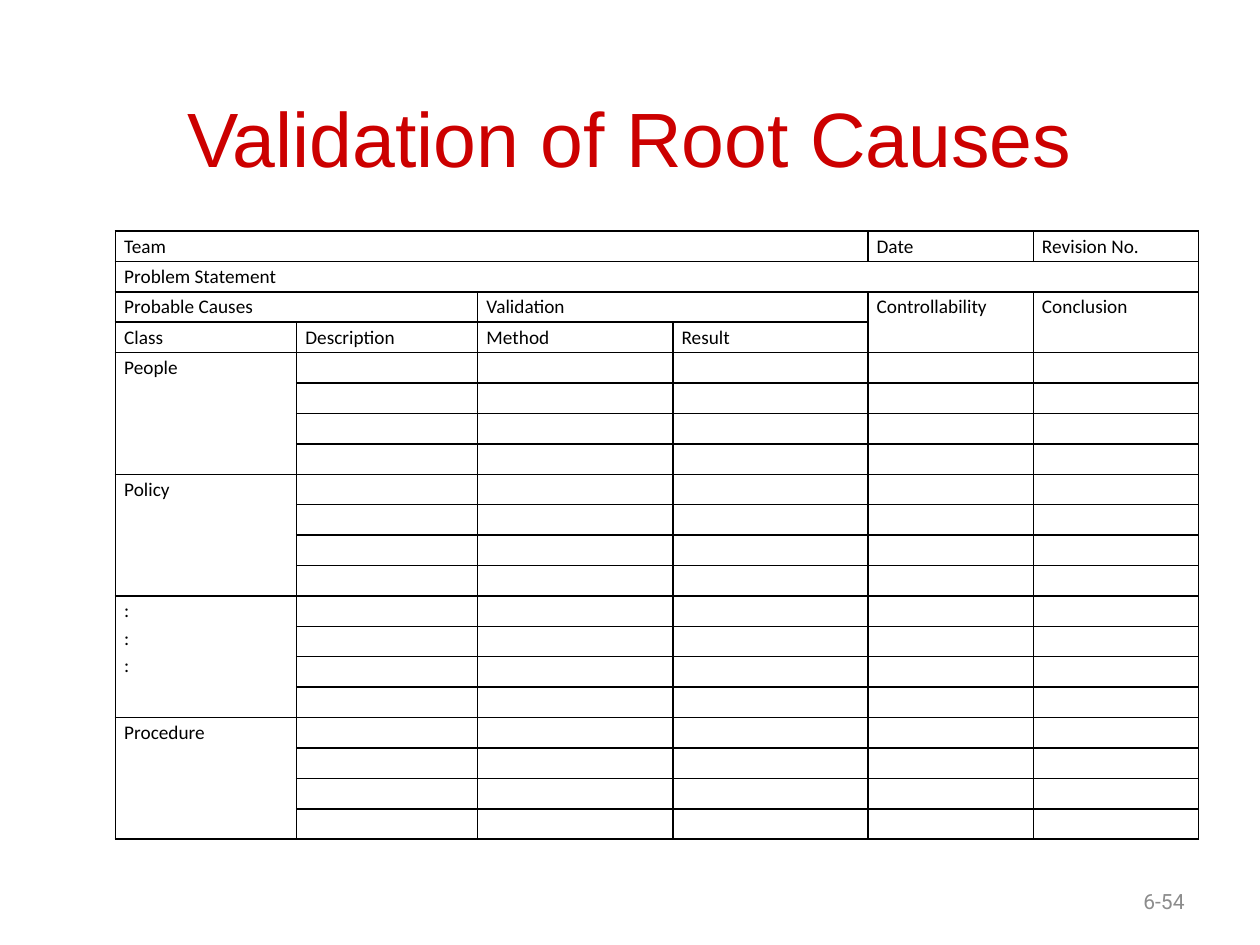
from lxml import etree
from pptx import Presentation
from pptx import util as u
from pptx.dml.color import RGBColor
from pptx.enum import text
from pptx.oxml import ns

ROWS = 20
ROW_HEIGHT = 17.39
COLUMN_WIDTHS = [103.5, 103.5, 111.5, 111.5, 94.5, 94.5]
GROUP_SIZE = 4
GROUPS = ["People", "Policy", ":\n:\n:", "Procedure"]
HEADINGS = [
    (0, 0, 1, 4, "Team"),
    (0, 4, 1, 1, "Date"),
    (0, 5, 1, 1, "Revision No."),
    (1, 0, 1, 6, "Problem Statement"),
    (2, 0, 1, 2, "Probable Causes"),
    (2, 2, 1, 2, "Validation"),
    (2, 4, 2, 1, "Controllability"),
    (2, 5, 2, 1, "Conclusion"),
    (3, 0, 1, 1, "Class"),
    (3, 1, 1, 1, "Description"),
    (3, 2, 1, 1, "Method"),
    (3, 3, 1, 1, "Result"),
]


def rgb(color):
    return RGBColor.from_string(color)


def write(frame, content, size, font, color, align=text.PP_ALIGN.LEFT,
          anchor=text.MSO_ANCHOR.TOP, spacing=None):
    frame.text = content
    frame.word_wrap = True
    frame.vertical_anchor = anchor
    for paragraph in frame.paragraphs:
        paragraph.alignment = align
        paragraph.line_spacing = spacing
        for run in paragraph.runs:
            run.font.size = u.Pt(size)
            run.font.name = font
            run.font.color.rgb = rgb(color)
        if not paragraph.runs:
            end = etree.SubElement(paragraph._p, ns.qn("a:endParaRPr"))
            end.set("sz", str(size * 100))


def add_borders(cell, color, width):
    properties = cell._tc.get_or_add_tcPr()
    for side in ("a:lnL", "a:lnR", "a:lnT", "a:lnB"):
        line = etree.SubElement(properties, ns.qn(side), w=str(u.Pt(width)))
        fill = etree.SubElement(line, ns.qn("a:solidFill"))
        etree.SubElement(fill, ns.qn("a:srgbClr"), val=color)


def format_cell(cell, content=""):
    write(cell.text_frame, content, size=11, font="Calibri", color="000000",
          spacing=1.15)


def add_title(slide, content):
    title = slide.shapes.title
    title.left, title.top = u.Pt(36), u.Pt(48)
    title.width, title.height = u.Pt(648), u.Pt(90)
    write(title.text_frame, content, size=44, font="Arial", color="CC0000",
          align=text.PP_ALIGN.CENTER)
    title.text_frame.auto_size = text.MSO_AUTO_SIZE.NONE


def add_validation_table(slide):
    frame = slide.shapes.add_table(
        ROWS, len(COLUMN_WIDTHS), u.Pt(66), u.Pt(132),
        u.Pt(sum(COLUMN_WIDTHS)), u.Pt(ROWS * ROW_HEIGHT))
    table = frame.table
    table.first_row = table.horz_banding = False
    for column, width in zip(table.columns, COLUMN_WIDTHS):
        column.width = u.Pt(width)
    for row in table.rows:
        row.height = u.Pt(ROW_HEIGHT)
    for cell in table.iter_cells():
        cell.margin_left = cell.margin_right = u.Pt(5)
        cell.margin_top = cell.margin_bottom = 0
        add_borders(cell, "000000", 1)
        cell.fill.background()
        format_cell(cell)

    first_group_row = ROWS - GROUP_SIZE * len(GROUPS)
    groups = [(first_group_row + GROUP_SIZE * index, 0, GROUP_SIZE, 1, name)
              for index, name in enumerate(GROUPS)]
    for row, column, height, width, label in HEADINGS + groups:
        cell = table.cell(row, column)
        if height * width > 1:
            cell.merge(table.cell(row + height - 1, column + width - 1))
        format_cell(cell, label)


def add_page_number(slide, content):
    box = slide.shapes.add_textbox(u.Pt(516), u.Pt(500.5), u.Pt(168), u.Pt(28.75))
    write(box.text_frame, content, size=12, font="Roboto", color="8C8C8C",
          align=text.PP_ALIGN.RIGHT, anchor=text.MSO_ANCHOR.MIDDLE)


def main():
    presentation = Presentation()
    presentation.slide_width, presentation.slide_height = u.Pt(720), u.Pt(540)
    slide = presentation.slides.add_slide(presentation.slide_layouts[5])
    add_validation_table(slide)
    add_title(slide, "Validation of Root Causes")
    add_page_number(slide, "6-54")
    presentation.save("out.pptx")


if __name__ == "__main__":
    main()
